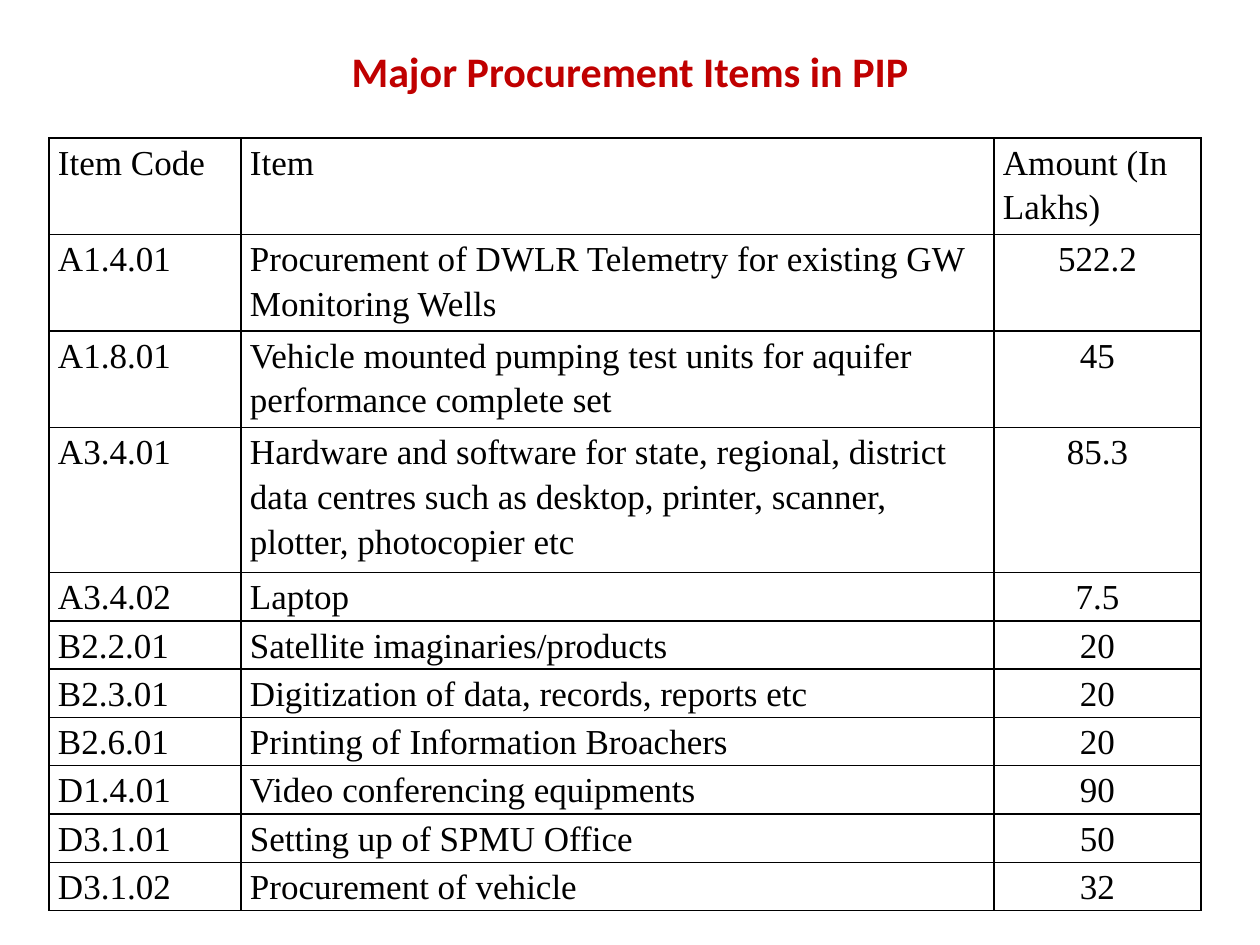
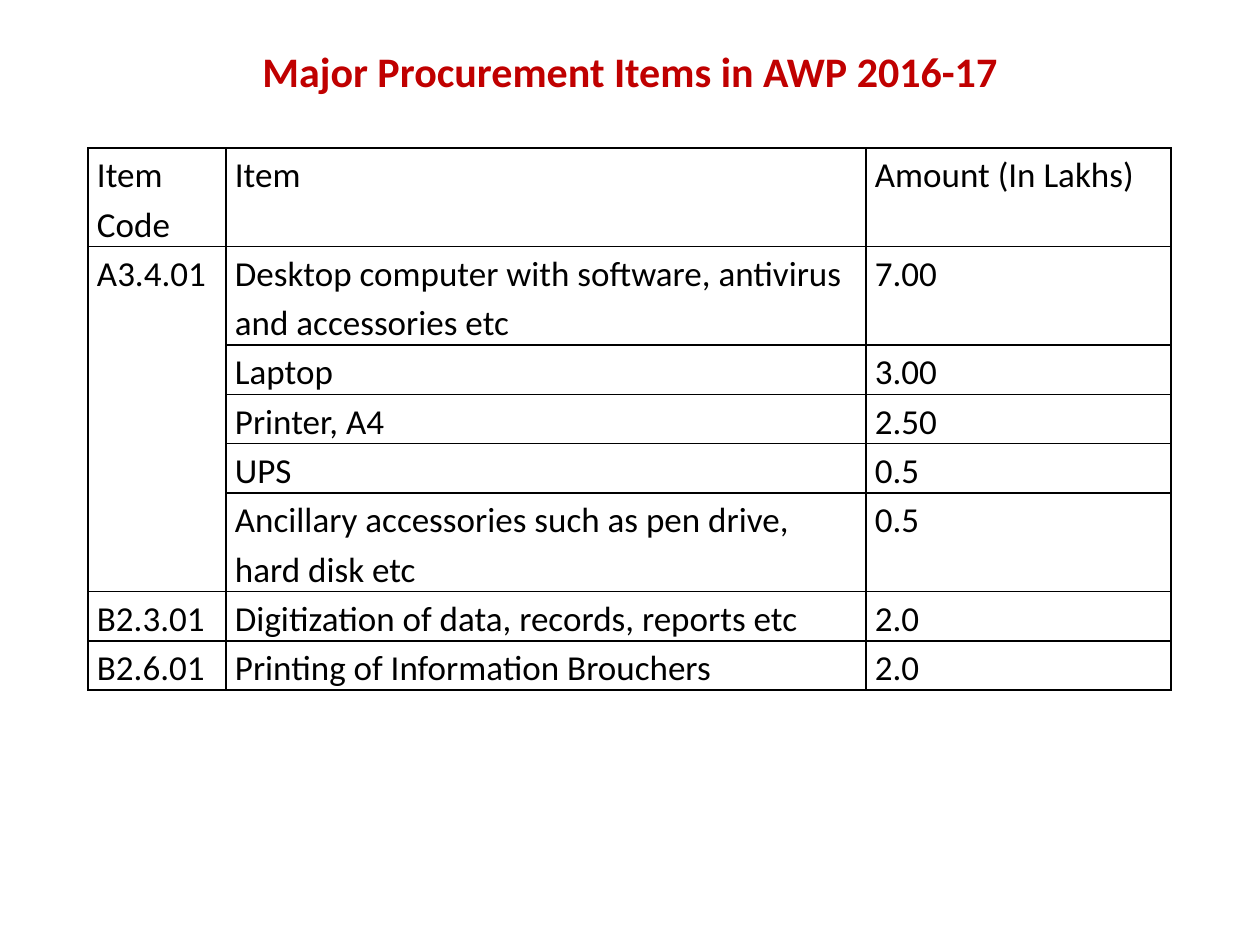
from lxml import etree
from pptx import Presentation, util as u
from pptx.dml.color import RGBColor
from pptx.enum import text
from pptx.oxml import ns

PX = u.Inches(1) // 126
SLIDE_WIDTH, SLIDE_HEIGHT = 1260, 945
TITLE_ONLY = 5
TITLE_COLOUR = "C00000"
INK = "000000"
HEADER = ("Item Code", "Item", "Amount (In Lakhs)")

# Each row: item code, item, amount, number of text lines
PIP_ROWS = [
    (*HEADER, 2),
    ("A1.4.01", "Procurement of DWLR Telemetry for existing GW Monitoring Wells", "522.2", 2),
    ("A1.8.01", "Vehicle mounted pumping test units for aquifer performance complete set", "45", 2),
    ("A3.4.01", "Hardware and software for state, regional, district data centres such as "
                "desktop, printer, scanner, plotter, photocopier etc", "85.3", 3),
    ("A3.4.02", "Laptop", "7.5", 1),
    ("B2.2.01", "Satellite imaginaries/products", "20", 1),
    ("B2.3.01", "Digitization of data, records, reports etc", "20", 1),
    ("B2.6.01", "Printing of Information Broachers", "20", 1),
    ("D1.4.01", "Video conferencing equipments", "90", 1),
    ("D3.1.01", "Setting up of SPMU Office", "50", 1),
    ("D3.1.02", "Procurement of vehicle", "32", 1),
]
# A code of None continues the code above it
AWP_ROWS = [
    (*HEADER, 2),
    ("A3.4.01", "Desktop computer with software, antivirus and accessories etc", "7.00", 2),
    (None, "Laptop", "3.00", 1),
    (None, "Printer, A4", "2.50", 1),
    (None, "UPS", "0.5", 1),
    (None, "Ancillary accessories such as pen drive, hard disk etc", "0.5", 2),
    ("B2.3.01", "Digitization of data, records, reports etc", "2.0", 1),
    ("B2.6.01", "Printing of Information Brouchers", "2.0", 1),
]


def px(length):
    return u.Emu(length * PX)


def rgb(colour):
    return RGBColor.from_string(colour)


def format_paragraph(paragraph, font_name, size, colour, align, bold=False):
    paragraph.alignment = align
    font = paragraph.font
    font.name, font.size, font.bold = font_name, u.Pt(size), bold
    font.color.rgb = rgb(colour)


def add_titled_slide(presentation, title):
    slide = presentation.slides.add_slide(presentation.slide_layouts[TITLE_ONLY])
    shape = slide.shapes.title
    shape.left, shape.top, shape.width, shape.height = px(0), px(39), px(SLIDE_WIDTH), px(63)
    shape.text_frame.text = title
    shape.text_frame.vertical_anchor = text.MSO_ANCHOR.MIDDLE
    format_paragraph(shape.text_frame.paragraphs[0], "Calibri", 24, TITLE_COLOUR,
                     text.PP_ALIGN.CENTER, bold=True)
    return slide


def set_borders(cell, colour, width=1):
    properties = cell._tc.get_or_add_tcPr()
    for side in ("lnL", "lnR", "lnT", "lnB"):
        line = etree.SubElement(properties, ns.qn(f"a:{side}"), w=str(u.Pt(width)))
        fill = etree.SubElement(line, ns.qn("a:solidFill"))
        etree.SubElement(fill, ns.qn("a:srgbClr"), val=colour)


def format_cell(cell, value, font_name, align):
    cell.margin_left = cell.margin_right = px(9)
    cell.margin_top = cell.margin_bottom = 0
    set_borders(cell, INK)
    cell.fill.background()
    if value is None:
        return
    cell.text = value
    paragraph = cell.text_frame.paragraphs[0]
    paragraph.line_spacing = 1.15
    format_paragraph(paragraph, font_name, 20, INK, align)


def merge_continued_codes(table, rows):
    start = 0
    for index, (code, *_) in enumerate(rows):
        if code is not None:
            start = index
        elif index + 1 == len(rows) or rows[index + 1][0] is not None:
            table.cell(start, 0).merge(table.cell(index, 0))


def add_items_table(slide, rows, left, top, widths, height, font_name, amount_align):
    """Share the height among the rows by their numbers of text lines."""
    frame = slide.shapes.add_table(len(rows), len(widths), px(left), px(top),
                                   px(sum(widths)), px(height))
    table = frame.table
    table.first_row = table.horz_banding = False
    for column, width in zip(table.columns, widths):
        column.width = px(width)
    total_lines = sum(row[-1] for row in rows)
    for index, (*values, lines) in enumerate(rows):
        table.rows[index].height = px(height) * lines // total_lines
        for column, value in enumerate(values):
            is_amount = column == 2 and index > 0
            align = amount_align if is_amount else text.PP_ALIGN.LEFT
            format_cell(table.cell(index, column), value, font_name, align)
    merge_continued_codes(table, rows)


def main():
    presentation = Presentation()
    presentation.slide_width, presentation.slide_height = px(SLIDE_WIDTH), px(SLIDE_HEIGHT)

    slide = add_titled_slide(presentation, "Major Procurement Items in PIP")
    add_items_table(slide, PIP_ROWS, 49, 138, (192, 753, 207), 773,
                    "Times New Roman", text.PP_ALIGN.CENTER)

    slide = add_titled_slide(presentation, "Major Procurement Items in AWP 2016-17")
    add_items_table(slide, AWP_ROWS, 88, 148, (138, 640, 305), 533,
                    "Calibri", text.PP_ALIGN.LEFT)

    presentation.save("out.pptx")


if __name__ == "__main__":
    main()
